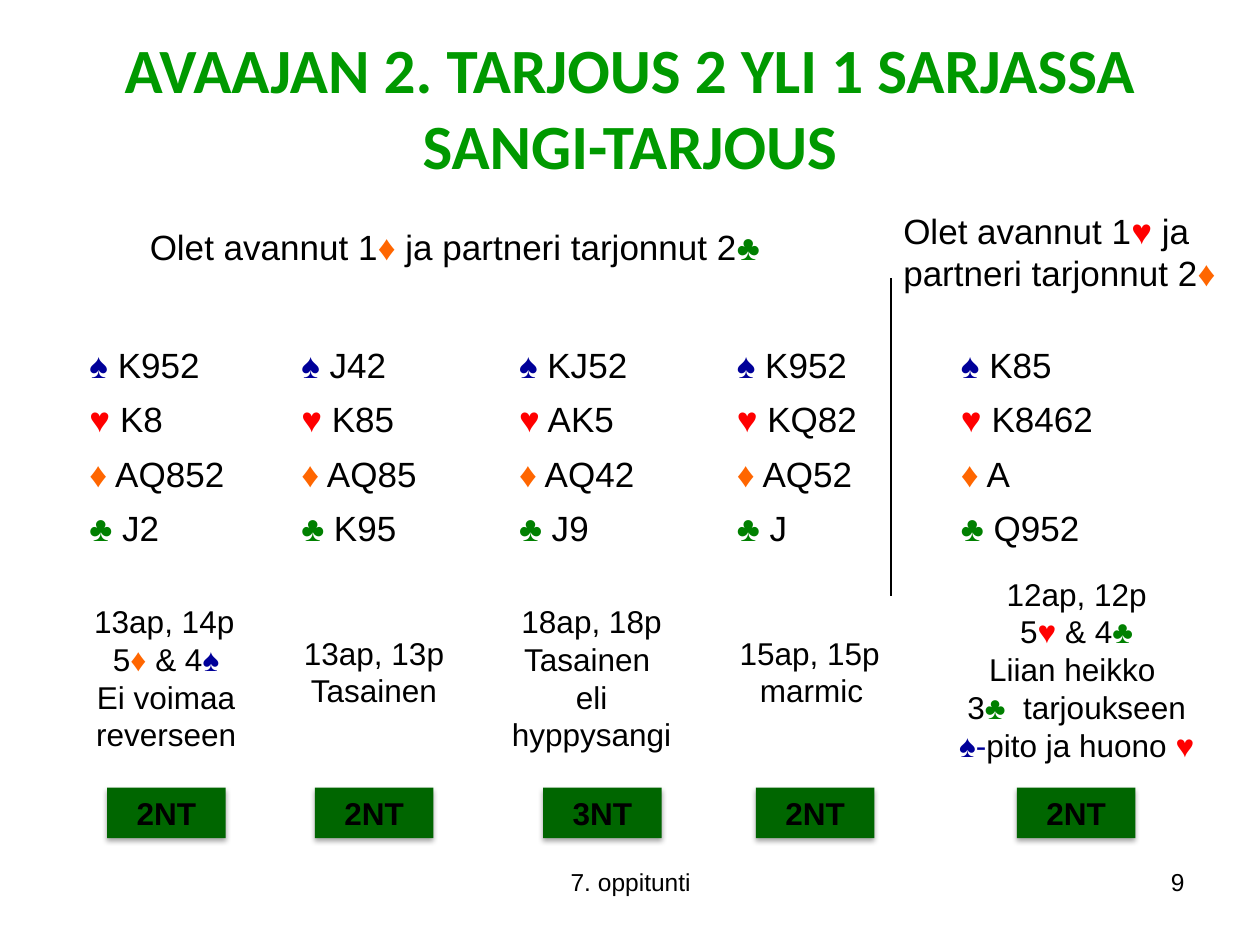
from itertools import groupby

from lxml import etree
from pptx import Presentation
from pptx.dml.color import RGBColor
from pptx.enum.shapes import MSO_CONNECTOR as LINE, MSO_SHAPE as SHAPE
from pptx.enum.text import MSO_ANCHOR as ANCHOR, MSO_AUTO_SIZE as FIT, PP_ALIGN as AL
from pptx.oxml import parse_xml
from pptx.oxml.ns import nsdecls, qn
from pptx.util import Cm, Pt

BLACK = RGBColor(0x00, 0x00, 0x00)
TITLE_GREEN = RGBColor(0x00, 0x99, 0x00)
BID_GREEN = RGBColor(0x00, 0x66, 0x00)
SPADE = RGBColor(0x00, 0x00, 0x99)
HEART = RGBColor(0xFF, 0x00, 0x00)
DIAMOND = RGBColor(0xFF, 0x66, 0x00)
CLUB = RGBColor(0x00, 0x80, 0x00)

# Suit symbols carry their own colour; the hyphen belongs to "♠-pito"
INK = {"♠": SPADE, "♥": HEART, "♦": DIAMOND, "♣": CLUB, "-": SPADE}

SHADOW = f"""<a:outerShdw {nsdecls('a')} blurRad="39370" dist="22860" dir="5400000"
 rotWithShape="0"><a:srgbClr val="000000"><a:alpha val="35000"/></a:srgbClr></a:outerShdw>"""

# Cards by suit, note box, note paragraphs, first alignment, bid and its left edge
HANDS = [
    (("K952", "K8", "AQ852", "J2"), (1.65, 12.01, 3.4, 3.33),
     ["13ap, 14p", "5♦ & 4♠", "Ei voimaa reverseen"], AL.LEFT, "2NT", 2.16),
    (("J42", "K85", "AQ85", "K95"), (5.84, 12.65, 3.4, 1.8),
     ["13ap, 13p", "Tasainen"], AL.CENTER, "2NT", 6.35),
    (("KJ52", "AK5", "AQ42", "J9"), (9.88, 12.01, 4.09, 3.33),
     ["18ap, 18p", "Tasainen \neli hyppysangi"], AL.CENTER, "3NT", 10.95),
    (("K952", "KQ82", "AQ52", "J"), (14.66, 12.65, 3.4, 1.8),
     ["15ap, 15p", "marmic"], AL.LEFT, "2NT", 15.24),
    (("K85", "K8462", "A", "Q952"), (19.05, 11.46, 5.31, 4.19),
     ["12ap, 12p", "5♥ & 4♣", "Liian heikko \n3♣  tarjoukseen",
      "♠-pito ja huono ♥"], AL.CENTER, "2NT", 20.5),
]


class Deck:
    """Holds the text style and the current slide."""

    base = {"name": "Arial", "size": Pt(18), "bold": False}

    def __init__(self, slide):
        self.s = slide

    def run(self, p, text, color, style):
        r = p.add_run()
        r.text = text
        for key, value in {**self.base, **style}.items():
            setattr(r.font, key, value)
        r.font.color.rgb = color

    def put_text(self, tf, paragraphs, align=AL.LEFT, ink=INK, color=BLACK, **style):
        for i, text in enumerate(paragraphs):
            p = tf.add_paragraph() if i else tf.paragraphs[0]
            p.alignment = align
            for j, line in enumerate(text.split("\n")):
                if j:
                    p.add_line_break()
                for rgb, chars in groupby(line, ink.get):
                    self.run(p, "".join(chars), rgb or color, style)

    def title(self, text, box):
        sp = self.s.shapes.title
        sp.left, sp.top, sp.width, sp.height = map(Cm, box)
        tf = sp.text_frame
        tf.vertical_anchor, tf.auto_size = ANCHOR.MIDDLE, FIT.NONE
        self.put_text(tf, [text], AL.CENTER, {}, TITLE_GREEN,
                      name="Calibri", size=Pt(36), bold=True)

    def text(self, paragraphs, box, align=AL.LEFT, fit=FIT.SHAPE_TO_FIT_TEXT, **style):
        tf = self.s.shapes.add_textbox(*map(Cm, box)).text_frame
        tf.word_wrap, tf.auto_size = True, fit
        self.put_text(tf, paragraphs, align, **style)
        return tf

    def bid(self, text, box):
        sp = self.s.shapes.add_shape(SHAPE.RECTANGLE, *map(Cm, box))
        sp.fill.solid()
        sp.fill.fore_color.rgb = BID_GREEN
        sp.line.fill.background()
        sp.shadow.inherit = False
        sp._element.spPr.find(qn("a:effectLst")).append(parse_xml(SHADOW))
        sp.text_frame.vertical_anchor = ANCHOR.MIDDLE
        self.put_text(sp.text_frame, [text], AL.CENTER, bold=True)

    def table(self, columns, left, top, widths, row_height):
        rows = len(columns[0])
        tbl = self.s.shapes.add_table(rows, len(columns), Cm(left), Cm(top),
                                      Cm(sum(widths)), Cm(row_height * rows)).table
        tbl.first_row = tbl.horz_banding = False
        for row in tbl.rows:
            row.height = Cm(row_height)
        for c, (column, width) in enumerate(zip(columns, widths)):
            tbl.columns[c].width = Cm(width)
            for r, text in enumerate(column):
                cell = tbl.cell(r, c)
                cell.fill.background()
                self.put_text(cell.text_frame, [text], AL.JUSTIFY, size=Pt(20))

    def line(self, x1, y1, x2, y2):
        ln = self.s.shapes.add_connector(LINE.STRAIGHT, *map(Cm, (x1, y1, x2, y2)))
        ln.line.color.rgb = BLACK
        ln.line.width = Pt(0.75)
        etree.SubElement(ln._element.spPr, qn("a:effectLst"))


def main():
    prs = Presentation()
    prs.slide_width, prs.slide_height = Cm(25.4), Cm(19.05)
    deck = Deck(prs.slides.add_slide(prs.slide_layouts[5]))

    deck.title("AVAAJAN 2. TARJOUS 2 YLI 1 SARJASSA\nSANGI-TARJOUS",
               (1.5, 0.48, 22.4, 3.33))

    # Hands, one column each
    columns = [[f"{suit} {cards}" for suit, cards in zip("♠♥♦♣", hand[0])]
               for hand in HANDS]
    deck.table(columns, 1.55, 6.86, [4.27, 4.39, 4.39, 4.52, 4.52], 1.1)

    # Auction headings and the divider between them
    deck.text(["Olet avannut 1♦ ja partneri tarjonnut 2♣"],
              (2.77, 4.42, 12.98, 1.12), size=Pt(20))
    deck.text(["Olet avannut 1♥ ja \npartneri tarjonnut 2♦"],
              (17.96, 4.09, 6.93, 1.96), size=Pt(20))
    deck.line(17.96, 5.61, 17.96, 12.01)

    # Notes and bids under the hands
    for _, box, note, first_align, bid, left in HANDS:
        tf = deck.text(note, box, AL.CENTER)
        tf.paragraphs[0].alignment = first_align
        deck.bid(bid, (left, 15.88, 2.39, 1.02))

    # Footer and slide number
    deck.text(["7. oppitunti"], (8.69, 17.35, 8.05, 1.32), AL.CENTER, FIT.NONE, size=Pt(14))
    deck.text(["9"], (18.21, 17.35, 5.92, 1.32), AL.RIGHT, FIT.NONE, size=Pt(14))

    prs.save("out.pptx")


if __name__ == "__main__":
    main()
